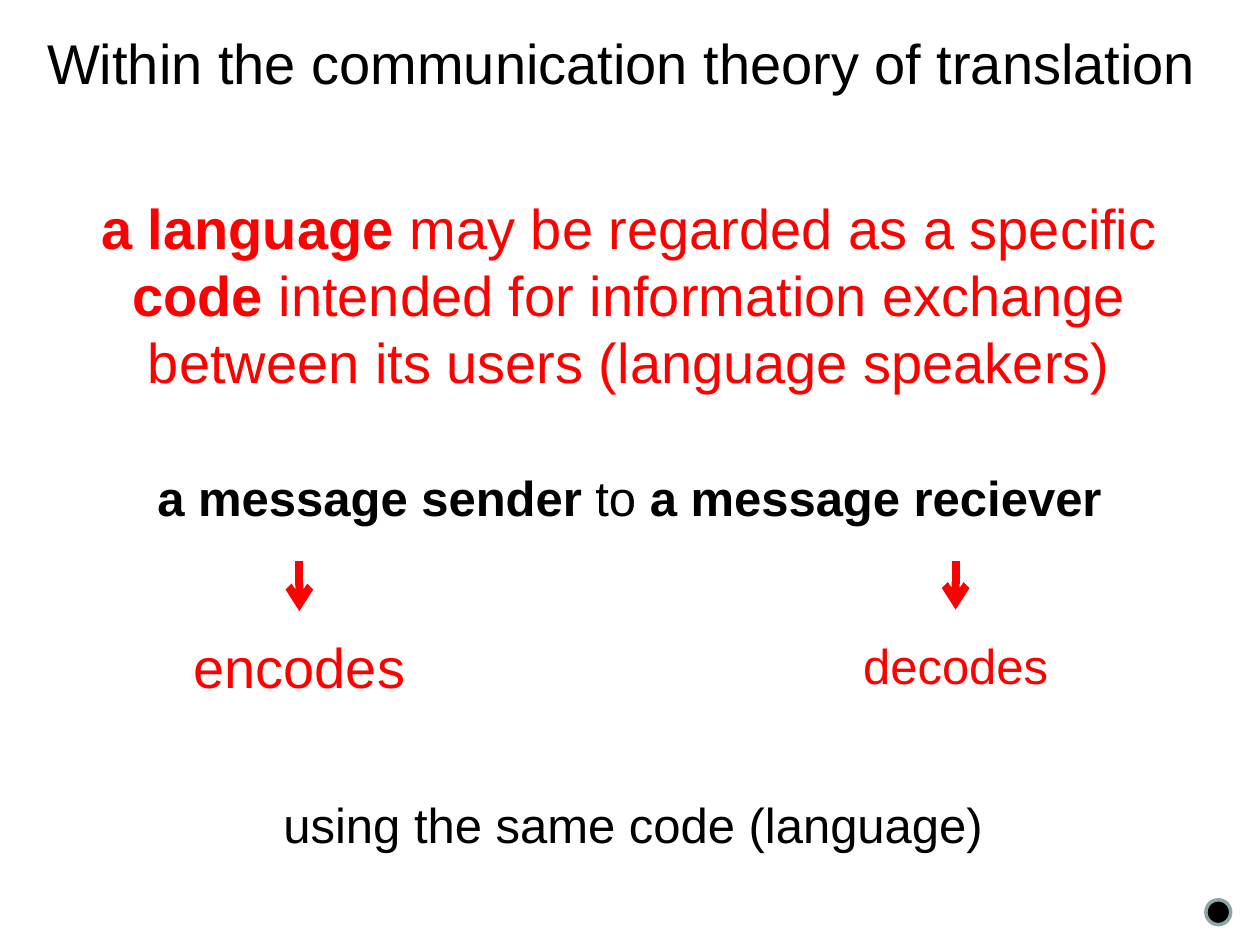
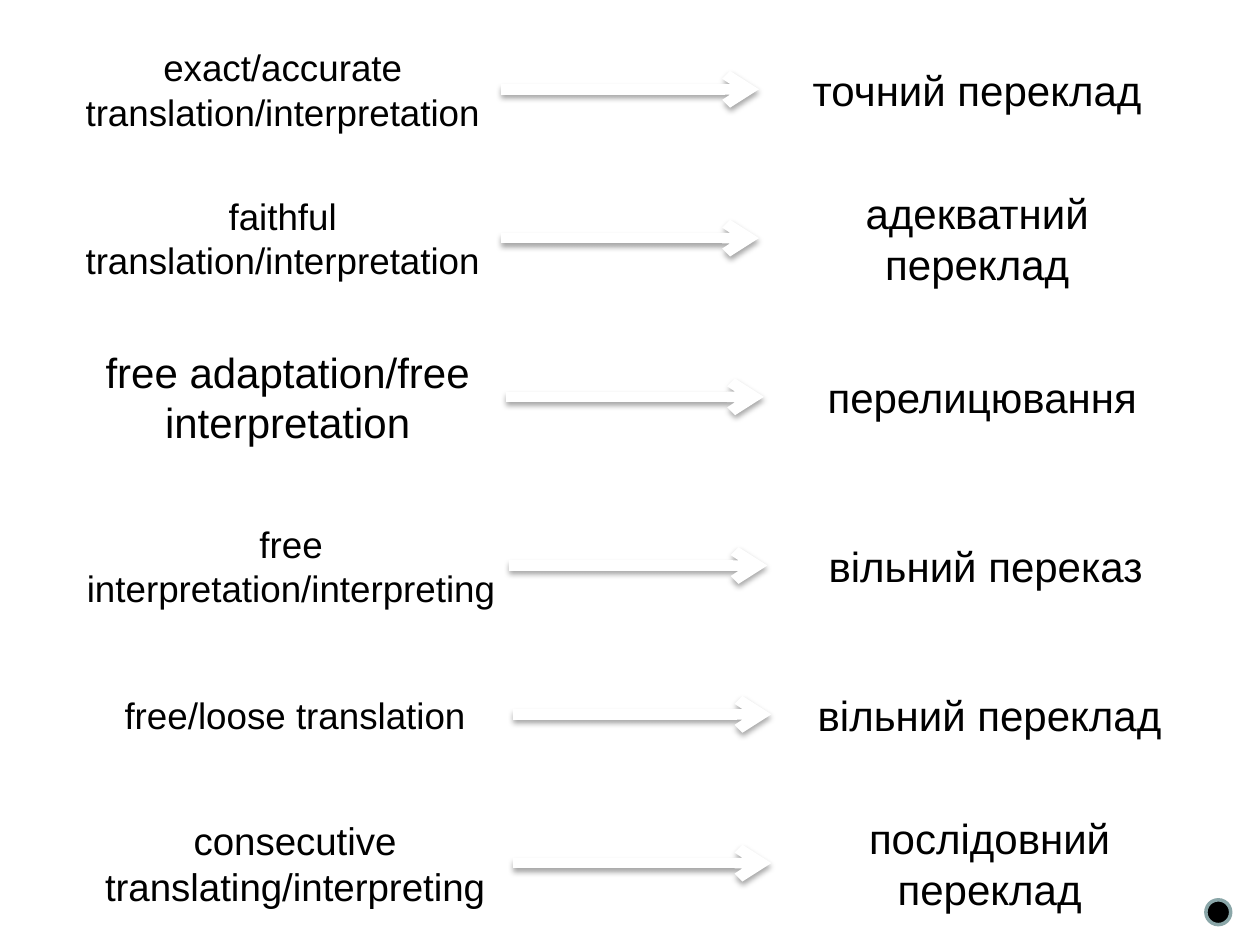
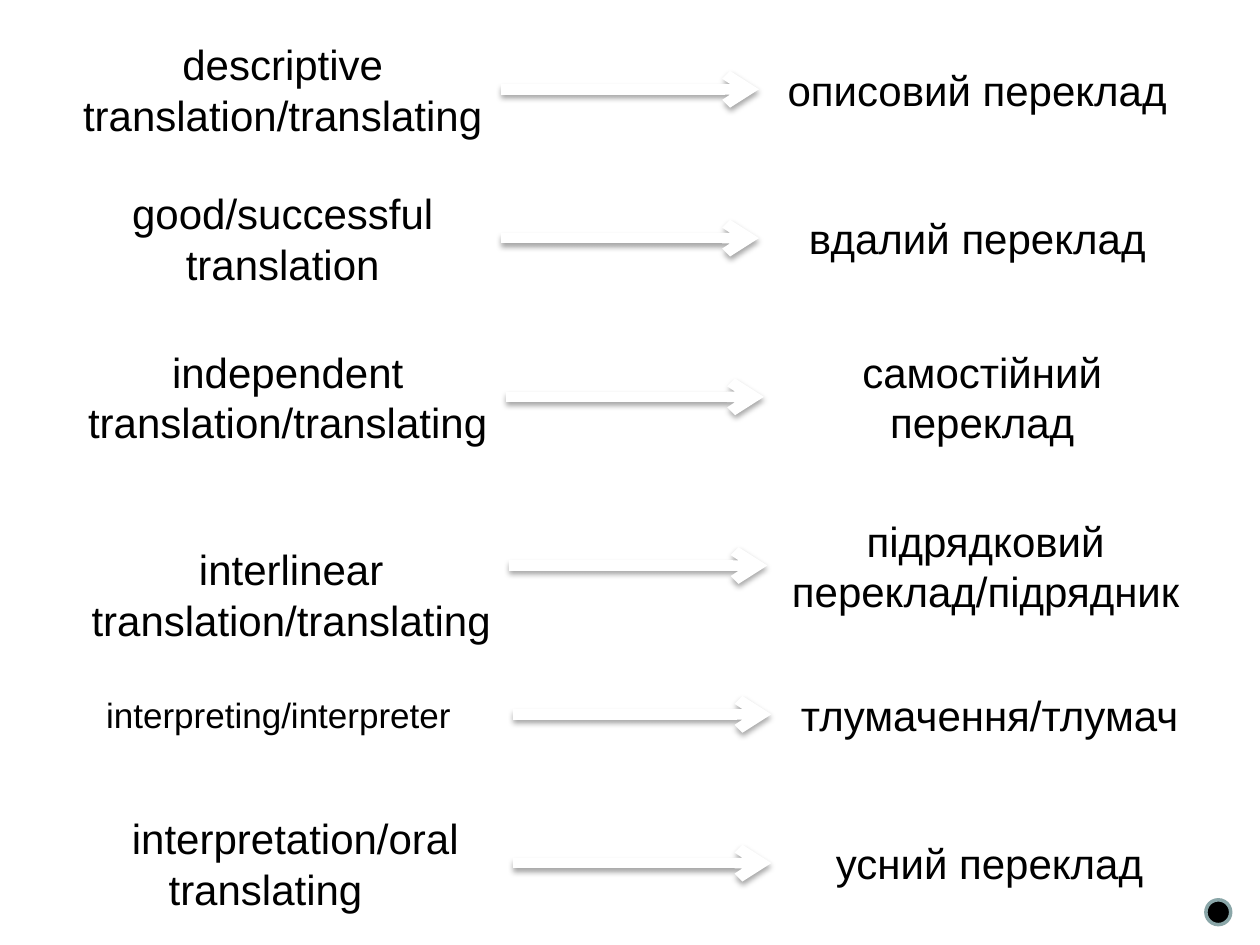
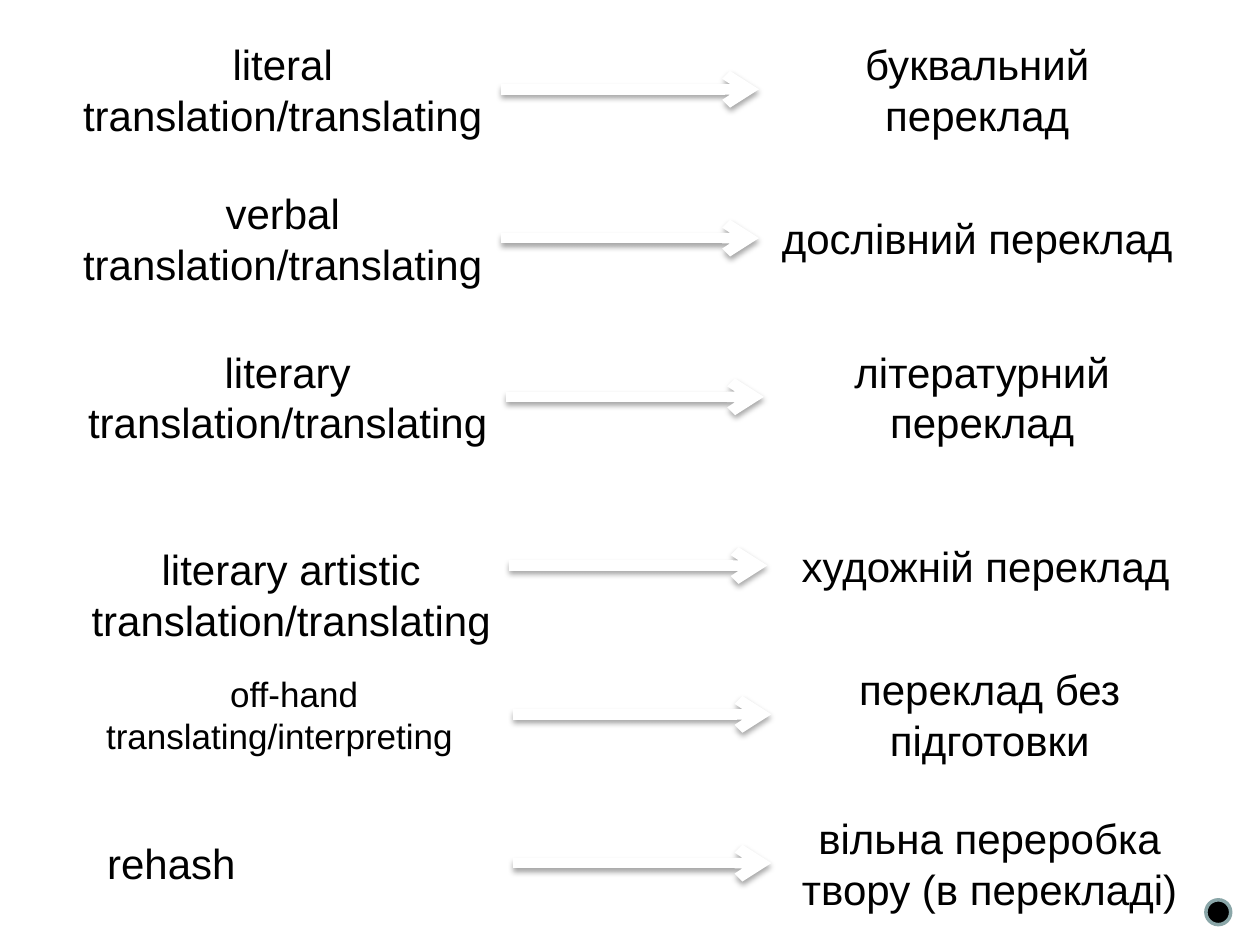
from typing import NamedTuple, Optional, Union

import lxml.etree
import pptx
import pptx.dml.color
import pptx.enum.shapes
import pptx.enum.text
import pptx.oxml.ns
import pptx.shapes.autoshape
import pptx.shapes.shapetree
import pptx.slide
import pptx.util

Cm = pptx.util.Cm
Pt = pptx.util.Pt
RGBColor = pptx.dml.color.RGBColor
Kind = pptx.enum.shapes.MSO_SHAPE
Align = pptx.enum.text.PP_ALIGN
Anchor = pptx.enum.text.MSO_ANCHOR
Shapes = Union[pptx.shapes.shapetree.SlideShapes, pptx.shapes.shapetree.GroupShapes]

WHITE = RGBColor(0xFF, 0xFF, 0xFF)
BLACK = RGBColor(0x00, 0x00, 0x00)
RED = RGBColor(0xFF, 0x00, 0x00)
TEAL = RGBColor(0x8A, 0xA6, 0xA8)
FONT = "Arial"

SHADOW = (
    '<a:outerShdw xmlns:a="http://schemas.openxmlformats.org/drawingml/2006/main" '
    'blurRad="40000" dist="23000" dir="5400000" rotWithShape="0">'
    '<a:srgbClr val="000000"><a:alpha val="35000"/></a:srgbClr></a:outerShdw>'
)


class Box(NamedTuple):
    """A rectangle in centimetres."""
    left: float
    top: float
    width: float
    height: float


class Indent(NamedTuple):
    """Left indents of the first line and of the other lines, in centimetres."""
    first: float
    rest: float


class Term(NamedTuple):
    """An English term, its Ukrainian match, and how the English text is set."""
    english: str
    local: str
    size: int = 24
    indent: Optional[Indent] = None
    drop: Optional[float] = None


# Left and top of each row of terms
ROWS = [(1.3, 0.53), (1.3, 3.53), (1.4, 6.73),
        (1.47, 10.13), (1.55, 13.13), (1.55, 16.13)]
CELL_WIDTH, CELL_HEIGHT, ARROW_LENGTH = 8.8, 2.54, 5.2

TERMS = [
    [
        Term("exact/accurate translation/interpretation", "точний переклад", 21),
        Term("faithful translation/interpretation", "адекватний переклад", 21),
        Term("free adaptation/free interpretation", "перелицювання"),
        Term("free interpretation/interpreting", "вільний переказ", 21),
        Term("free/loose translation", "вільний переклад", 21),
        Term("consecutive translating/interpreting", "послідовний переклад", 22),
    ],
    [
        Term("descriptive translation/translating", "описовий переклад"),
        Term("good/successful translation", "вдалий переклад"),
        Term("independent translation/translating", "самостійний переклад"),
        Term("interlinear translation/translating",
             "підрядковий переклад/підрядник", drop=0.83),
        Term("interpreting/interpreter", "тлумачення/тлумач", 20, Indent(0.34, 0.34)),
        Term("interpretation/oral translating", "усний переклад",
             indent=Indent(0.86, 1.6)),
    ],
    [
        Term("literal translation/translating", "буквальний переклад"),
        Term("verbal translation/translating", "дослівний переклад"),
        Term("literary translation/translating", "літературний переклад"),
        Term("literary artistic translation/translating",
             "художній переклад", drop=0.83),
        Term("off-hand translating/interpreting", "переклад без підготовки",
             20, Indent(2.84, 0.34)),
        Term("rehash", "вільна переробка твору (в перекладі)",
             indent=Indent(0.36, 0.36)),
    ],
]


def add_form(shapes: Shapes, box: Box, kind: Kind, fill: RGBColor,
             line: RGBColor) -> pptx.shapes.autoshape.Shape:
    form = shapes.add_shape(kind, *map(Cm, box))
    form.shadow.inherit = False
    form.fill.solid()
    form.fill.fore_color.rgb = fill
    form.line.color.rgb = line
    form.line.width = Pt(2)
    return form


def add_text(shapes: Shapes, box: Box, text: str, *, size: int = 24,
             color: RGBColor = BLACK, kind: Kind = Kind.RECTANGLE,
             indent: Optional[Indent] = None, drop: Optional[float] = None) -> None:
    """Draw a white box with text; parts between asterisks are bold.

    With drop, the text starts that far below the top of the box.
    """
    frame = add_form(shapes, box, kind, WHITE, WHITE).text_frame
    frame.word_wrap = True
    frame.vertical_anchor = Anchor.MIDDLE
    if drop is not None:
        frame.vertical_anchor = Anchor.TOP
        frame.margin_top, frame.margin_bottom = Cm(drop), 0
    para = frame.paragraphs[0]
    para.alignment = Align.CENTER
    if indent:
        para.alignment = Align.LEFT
        props = para._p.get_or_add_pPr()
        props.set("marL", str(Cm(indent.rest)))
        props.set("indent", str(Cm(indent.first) - Cm(indent.rest)))
    for index, part in enumerate(text.split("*")):
        if part:
            run = para.add_run()
            run.text = part
            run.font.name = FONT
            run.font.size = Pt(size)
            run.font.bold = index % 2 == 1
            run.font.color.rgb = color


def add_arrow(shapes: Shapes, start: tuple[float, float], end: tuple[float, float],
              color: RGBColor, width: float, shadow: bool = False) -> None:
    arrow = shapes.add_connector(pptx.enum.shapes.MSO_CONNECTOR.STRAIGHT,
                                 *map(Cm, start + end))
    arrow.line.color.rgb = color
    arrow.line.width = Pt(width)
    qn = pptx.oxml.ns.qn
    lxml.etree.SubElement(arrow.line._get_or_add_ln(), qn("a:tailEnd"), type="arrow")
    effects = lxml.etree.SubElement(arrow._element.spPr, qn("a:effectLst"))
    if shadow:
        effects.append(lxml.etree.fromstring(SHADOW))


def add_slide(deck: pptx.presentation.Presentation) -> pptx.slide.Slide:
    slide = deck.slides.add_slide(deck.slide_layouts[6])
    slide.background.fill.solid()
    slide.background.fill.fore_color.rgb = WHITE
    return slide


def add_dot(slide: pptx.slide.Slide) -> None:
    add_form(slide.shapes, Box(24.31, 18.14, 0.5, 0.5), Kind.OVAL, BLACK, TEAL)


def add_theory(deck: pptx.presentation.Presentation) -> None:
    slide = add_slide(deck)
    shapes, round_box = slide.shapes, Kind.ROUNDED_RECTANGLE
    add_text(shapes, Box(0, 0, 25.4, 2.51),
             "Within the communication theory of translation ", size=32)
    add_text(shapes, Box(0.79, 3.33, 23.8, 5.21),
             "*a language* may be regarded as a specific *code* intended for "
             "information exchange between its users (language speakers)",
             size=32, color=RED, kind=round_box)
    add_text(shapes, Box(0.79, 8.74, 23.8, 2.57),
             "*a message sender* to *a message reciever*", size=28, kind=round_box)
    for word, size, left, top in (("encodes", 32, 0.79, 12.32),
                                  ("decodes", 28, 14.02, 12.29)):
        group = shapes.add_group_shape().shapes
        box = Box(left, top, 10.49, 2.21)
        add_text(group, box, word, size=size, color=RED, kind=round_box)
        middle = left + box.width / 2
        add_arrow(group, (middle, 11.3), (middle, top), RED, 4.5)
    add_text(shapes, Box(0.86, 15.32, 23.8, 2.57),
             "using the same code (language)", size=28, kind=round_box)
    add_dot(slide)


def add_terms(deck: pptx.presentation.Presentation, terms: list[Term]) -> None:
    slide = add_slide(deck)
    for (left, top), term in zip(ROWS, terms):
        cell = Box(left, top, CELL_WIDTH, CELL_HEIGHT)
        add_text(slide.shapes, cell, term.english, size=term.size,
                 indent=term.indent, drop=term.drop)
        start = left + CELL_WIDTH
        end = start + ARROW_LENGTH
        middle = top + CELL_HEIGHT / 2
        group = slide.shapes.add_group_shape().shapes
        add_text(group, cell._replace(left=end), term.local)
        add_arrow(group, (start, middle), (end, middle), WHITE, 6, shadow=True)
    add_dot(slide)


def main() -> None:
    deck = pptx.Presentation()
    deck.slide_width, deck.slide_height = Cm(25.4), Cm(19.05)
    add_theory(deck)
    for terms in TERMS:
        add_terms(deck, terms)
    deck.save("out.pptx")


if __name__ == "__main__":
    main()
